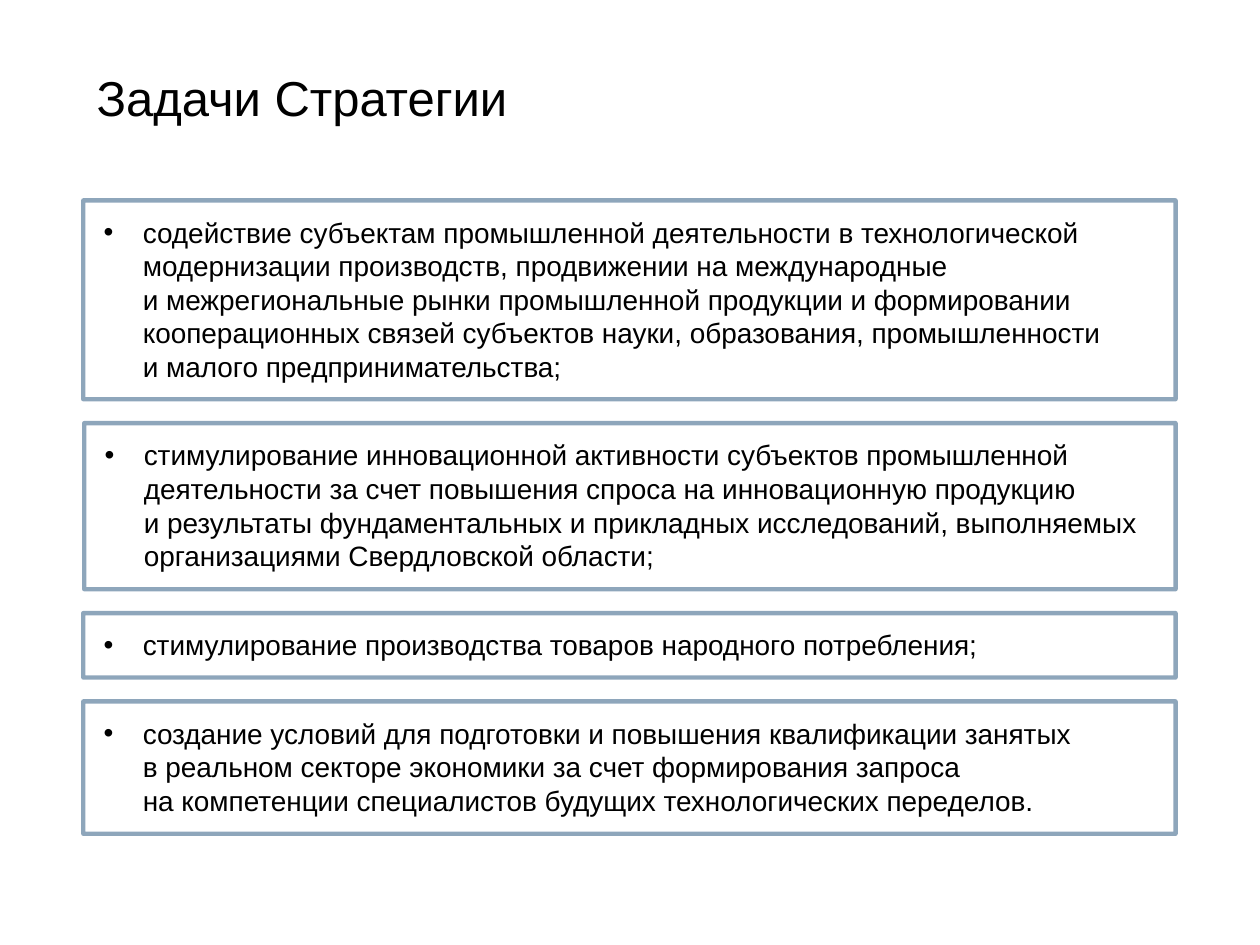
from lxml.etree import SubElement
from pptx import Presentation
from pptx.dml.color import RGBColor
from pptx.enum.shapes import MSO_SHAPE
from pptx.enum.text import MSO_ANCHOR, MSO_AUTO_SIZE, PP_ALIGN
from pptx.oxml.ns import qn
from pptx.util import Cm, Pt

COLOURS = {"text": "000000", "panel": "FFFFFF", "border": "1F4E79"}

TASKS = [  # height in cm, lines with forced breaks
    (4.01, [
        "содействие субъектам промышленной деятельности в технологической "
        "модернизации производств, продвижении на международные ",
        "и межрегиональные рынки промышленной продукции и формировании "
        "кооперационных связей субъектов науки, образования, промышленности ",
        "и малого предпринимательства;"]),
    (3.35, [
        "стимулирование инновационной активности субъектов промышленной "
        "деятельности за счет повышения спроса на инновационную продукцию ",
        "и результаты фундаментальных и прикладных исследований, выполняемых "
        "организациями Свердловской области;"]),
    (1.3, ["стимулирование производства товаров народного потребления;"]),
    (2.67, [
        "создание условий для подготовки и повышения квалификации занятых ",
        "в реальном секторе экономики за счет формирования запроса ",
        "на компетенции специалистов будущих технологических переделов."]),
]


class TaskSlide:
    def __init__(self, page, font="Arial"):
        self.page = page
        self.font = font

    def apply(self, target, values):
        for name, value in values.items():
            setattr(target, name, value)

    def paint(self, colour_format, name, opacity=None):
        colour_format.rgb = RGBColor.from_string(COLOURS[name])
        if opacity is not None:
            node = colour_format._xFill.find(qn("a:srgbClr"))
            SubElement(node, qn("a:alpha"), val=str(opacity * 1000))

    def add_lines(self, para, lines, size):
        for number, line in enumerate(lines):
            if number:
                para.add_line_break()
            span = para.add_run()
            span.text = line
            self.apply(span.font, {"name": self.font, "size": Pt(size)})
            self.paint(span.font.color, "text")

    def title(self, text, left, top, width, height):
        box = self.page.shapes.add_textbox(Cm(left), Cm(top), Cm(width), Cm(height))
        frame = box.text_frame
        self.apply(frame, {"word_wrap": True, "vertical_anchor": MSO_ANCHOR.MIDDLE})
        para = frame.paragraphs[0]
        para.line_spacing = 0.9
        self.add_lines(para, [text], 28)

    def panel(self, lines, left, top, width, height):
        box = self.page.shapes.add_shape(
            MSO_SHAPE.RECTANGLE, Cm(left), Cm(top), Cm(width), Cm(height))
        box.shadow.inherit = False
        box.fill.solid()
        self.paint(box.fill.fore_color, "panel", 80)
        box.line.width = Pt(2.5)
        box.line.fill.solid()
        self.paint(box.line.fill.fore_color, "border", 50)
        frame = box.text_frame
        self.apply(frame, {
            "word_wrap": True, "auto_size": MSO_AUTO_SIZE.SHAPE_TO_FIT_TEXT,
            "vertical_anchor": MSO_ANCHOR.TOP,
            "margin_left": Cm(0.41), "margin_top": Cm(0.3),
            "margin_right": Cm(0.61), "margin_bottom": Cm(0.3)})
        para = frame.paragraphs[0]
        para.alignment = PP_ALIGN.LEFT
        self.bullet(para, 0.79)
        self.add_lines(para, lines, 16)

    def bullet(self, para, indent):
        properties = para._p.get_or_add_pPr()
        properties.set("marL", str(Cm(indent)))
        properties.set("indent", str(-Cm(indent)))
        SubElement(properties, qn("a:buFont"), typeface=self.font)
        SubElement(properties, qn("a:buChar"), char="•")


def main():
    deck = Presentation()
    deck.slide_width, deck.slide_height = Cm(25.4), Cm(19.05)
    slide = TaskSlide(deck.slides.add_slide(deck.slide_layouts[6]))

    # Heading
    slide.title("Задачи Стратегии", 1.7, 0.53, 22, 3)

    # Task panels, stacked with equal gaps
    left, right, top, gap = 1.68, 23.7, 4.04, 0.48
    for number, (height, lines) in enumerate(TASKS):
        start = left + 0.02 if number == 1 else left
        slide.panel(lines, start, top, right - start, height)
        top += height + gap

    deck.save("out.pptx")


if __name__ == "__main__":
    main()
